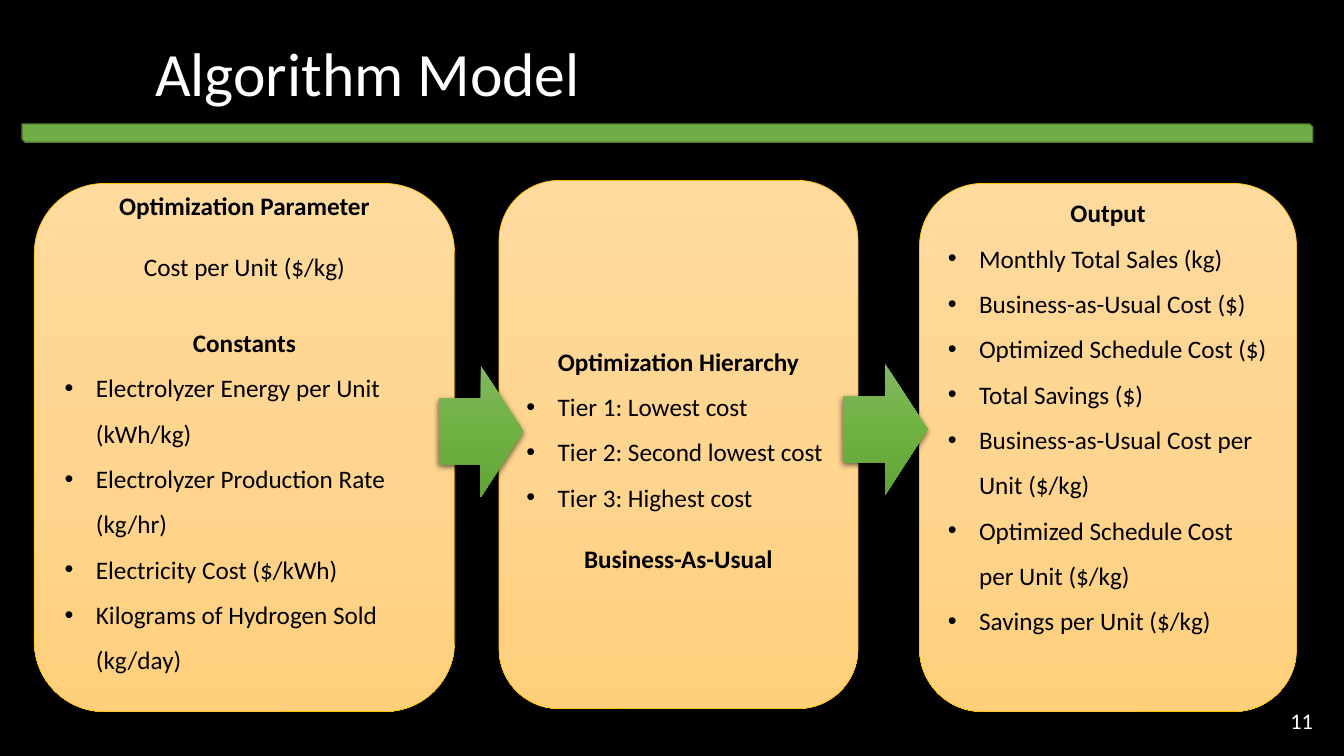
"""Build the Algorithm Model slide: three panels linked by arrows."""
from copy import deepcopy
from lxml.etree import SubElement as Sub
from pptx import Presentation
from pptx.dml.color import RGBColor as RGB
from pptx.enum.shapes import MSO_SHAPE as Shape
from pptx.enum.text import MSO_ANCHOR as Anchor, PP_ALIGN as Align
from pptx.oxml.ns import qn
from pptx.util import Pt

SCALE = 9144
COLORS = {
    "back": "000000", "light": "FFFFFF", "dark": "000000",
    "green": "70AD47", "edge": "538035", "gold": "FFC000",
}
SAND = ("FFDB9E", "FFD590", "FFD07C")
LEAF = ("81B861", "6FB242", "62A336")
GAP = 22


def px(n):
    return n * SCALE


class Deck:
    def __init__(self, font="Calibri"):
        self.font = font
        self.prs = Presentation()
        self.prs.slide_width, self.prs.slide_height = px(1333), px(750)
        self.slide = self.prs.slides.add_slide(self.prs.slide_layouts[6])
        fill = self.slide.background.fill
        fill.solid()
        fill.fore_color.rgb = self.color("back")

    def color(self, name):
        return RGB.from_string(COLORS.get(name, name))

    def run(self, para, text, size, color, bold=False):
        run = para.add_run()
        run.text = text
        font = run.font
        font.name, font.size, font.bold = self.font, Pt(size), bold
        font.color.rgb = self.color(color)

    def label(self, box, text, size, align, lead=1.0):
        frame = self.slide.shapes.add_textbox(*map(px, box)).text_frame
        frame.word_wrap = True
        frame.vertical_anchor = Anchor.MIDDLE
        para = frame.paragraphs[0]
        para.alignment, para.line_spacing = align, lead
        self.run(para, text, size, "light")

    def shape(self, kind, box, edge=None, width=1):
        shape = self.slide.shapes.add_shape(kind, *map(px, box))
        shape.shadow.inherit = False
        if edge:
            shape.line.color.rgb = self.color(edge)
            shape.line.width = Pt(width)
        else:
            shape.line.fill.background()
        return shape

    def bar(self, box):
        shape = self.shape(Shape.SNIP_2_DIAG_RECTANGLE, box, "edge")
        shape.fill.solid()
        shape.fill.fore_color.rgb = self.color("green")

    def blend(self, shape, colors):
        fill = shape.fill
        fill.gradient()
        fill.gradient_angle = 270
        stops = next(shape._element.spPr.iter(qn("a:gsLst")))
        stops.insert(1, deepcopy(stops[0]))
        for i, (stop, color) in enumerate(zip(fill.gradient_stops, colors)):
            stop.position = i / 2
            stop.color.rgb = self.color(color)

    def arrow(self, box):
        shape = self.shape(Shape.RIGHT_ARROW, box)
        self.blend(shape, LEAF)
        cast = Sub(shape._element.spPr.find(qn("a:effectLst")),
                   qn("a:outerShdw"), blurRad="57150", dist="19050",
                   dir="5400000", algn="ctr", rotWithShape="0")
        tone = Sub(cast, qn("a:srgbClr"), val="000000")
        Sub(tone, qn("a:alpha"), val="63000")

    def bullet(self, para):
        props = para._p.get_or_add_pPr()
        props.set("marL", str(px(31)))
        props.set("indent", str(-px(31)))
        Sub(props, qn("a:buFont"), typeface="Arial")
        Sub(props, qn("a:buChar"), char="•")

    def panel(self, box, lines, top=5, foot=5):
        shape = self.shape(Shape.ROUNDED_RECTANGLE, box, "gold", 0.5)
        self.blend(shape, SAND)
        frame = shape.text_frame
        frame.word_wrap = True
        frame.vertical_anchor = Anchor.MIDDLE
        frame.margin_top, frame.margin_bottom = px(top), px(foot)
        for i, (kind, text, lead, gap) in enumerate(lines):
            para = frame.add_paragraph() if i else frame.paragraphs[0]
            para.line_spacing = lead
            para.space_before = Pt(gap)
            if kind == "item":
                para.alignment = Align.LEFT
                self.bullet(para)
            else:
                para.alignment = Align.CENTER
            self.run(para, text, 18, "dark", kind == "head")


def head(text, lead=1.0, gap=0):
    return "head", text, lead, gap


def items(*texts):
    return [("item", text, 1.5, 0) for text in texts]


def main():
    deck = Deck()
    deck.label((144, 3, 1150, 145), "Algorithm Model", 44, Align.LEFT, 0.9)
    deck.label((998, 679, 314, 71), "11", 16, Align.RIGHT)
    deck.panel((34, 182, 417, 524), [
        head("Optimization Parameter"),
        ("plain", "Cost per Unit ($/kg)", 1.0, GAP),
        head("Constants", 1.5, GAP),
        *items("Electrolyzer Energy per Unit (kWh/kg)",
               "Electrolyzer Production Rate (kg/hr)",
               "Electricity Cost ($/kWh)",
               "Kilograms of Hydrogen Sold (kg/day)"),
    ], foot=35)
    deck.panel((495, 179, 356, 524), [
        head("Optimization Hierarchy", 1.5),
        *items("Tier 1: Lowest cost", "Tier 2: Second lowest cost",
               "Tier 3: Highest cost"),
        head("Business-As-Usual", 1.0, GAP),
    ], top=20)
    deck.panel((912, 182, 374, 524), [
        head("Output"),
        *items("Monthly Total Sales (kg)", "Business-as-Usual Cost ($)",
               "Optimized Schedule Cost ($)", "Total Savings ($)",
               "Business-as-Usual Cost per Unit ($/kg)",
               "Optimized Schedule Cost per Unit ($/kg)",
               "Savings per Unit ($/kg)"),
    ], foot=66)
    for left, top in ((435, 363), (836, 361)):
        deck.arrow((left, top, 84, 130))
    deck.bar((22, 123, 1280, 18))
    deck.prs.save("out.pptx")


if __name__ == "__main__":
    main()
